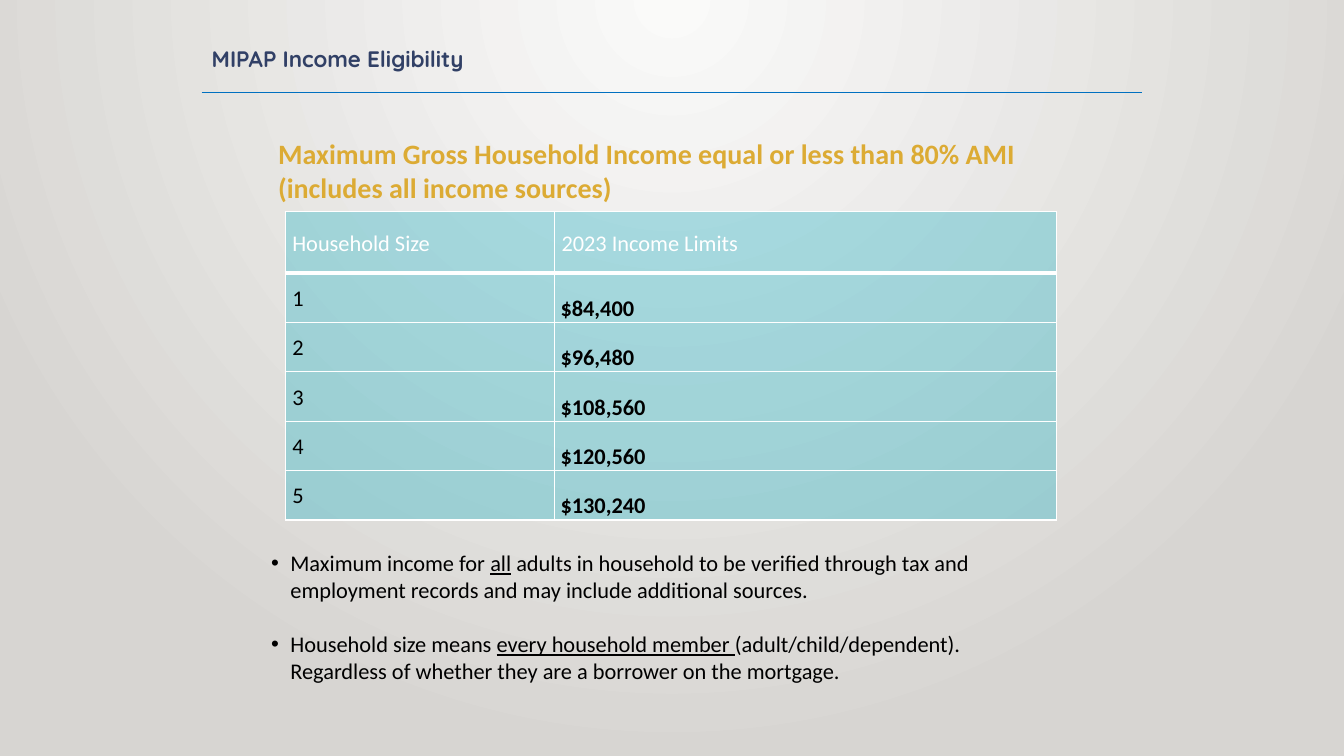
import lxml.etree
import pptx
import pptx.dml.color
import pptx.enum.shapes
import pptx.enum.text
import pptx.oxml.ns
import pptx.util

Inches = pptx.util.Inches
Pt = pptx.util.Pt
qn = pptx.oxml.ns.qn
Anchor = pptx.enum.text.MSO_ANCHOR


def rgb(value):
    return pptx.dml.color.RGBColor.from_string(value)


def write(paragraph, text, color, size=16, bold=False, underline=False, face="Calibri"):
    run = paragraph.add_run()
    run.text = text
    formats = {"name": face, "size": Pt(size), "bold": bold, "underline": underline}
    for key, value in formats.items():
        setattr(run.font, key, value)
    run.font.color.rgb = rgb(color)


presentation = pptx.Presentation()
presentation.slide_width = Inches(13.33)
presentation.slide_height = Inches(7.5)
slide = presentation.slides.add_slide(presentation.slide_layouts[1])

backdrop = slide.background.fill
backdrop.gradient()
for stop, color in zip(backdrop.gradient_stops, ["FAFAF9", "D7D5D2"]):
    stop.color.rgb = rgb(color)
gradient = slide.background._cSld.find(".//" + qn("a:gradFill"))
gradient.remove(gradient.find(qn("a:lin")))
glow = lxml.etree.SubElement(gradient, qn("a:path"), path="circle")
lxml.etree.SubElement(glow, qn("a:fillToRect"), l="43000", t="0", r="43000", b="100000")

heading = slide.shapes.title
requirements = slide.placeholders[1]
income_rule = slide.shapes.add_textbox(0, 0, 0, 0)
text_areas = [
    (heading, 2, 0.4, 9.42, 0.37),
    (income_rule, 2.66, 1.31, 8, 0.8),
    (requirements, 2.59, 5.4, 7.9, 1.45),
]
for area, left, top, width, height in text_areas:
    layout = {
        "left": Inches(left),
        "top": Inches(top),
        "width": Inches(width),
        "height": Inches(height),
    }
    for key, value in layout.items():
        setattr(area, key, value)
    frame_formats = {
        "word_wrap": True,
        "auto_size": pptx.enum.text.MSO_AUTO_SIZE.NONE,
        "vertical_anchor": Anchor.TOP,
    }
    for key, value in frame_formats.items():
        setattr(area.text_frame, key, value)
    area.text_frame.paragraphs[0].alignment = pptx.enum.text.PP_ALIGN.LEFT

write(heading.text_frame.paragraphs[0], "MIPAP Income Eligibility", "314066",
      bold=True, face="Quicksand")
write(income_rule.text_frame.paragraphs[0],
      "Maximum Gross Household Income equal or less than 80% AMI (includes all income sources)",
      "DCAB34", size=20, bold=True)

divider = slide.shapes.add_connector(
    pptx.enum.shapes.MSO_CONNECTOR.STRAIGHT,
    Inches(2), Inches(0.92), Inches(11.33), Inches(0.92))
divider.line.color.rgb = rgb("0070C0")
divider.line.width = Pt(1)
lxml.etree.SubElement(divider._element.spPr, qn("a:effectLst"))

income_limits = [
    ("Household Size", "2023 Income Limits"),
    ("1", "$84,400"),
    ("2", "$96,480"),
    ("3", "$108,560"),
    ("4", "$120,560"),
    ("5", "$130,240"),
]
limits = slide.shapes.add_table(
    len(income_limits), 2, Inches(2.83), Inches(2.1), Inches(7.65), Inches(3.06)).table
for column, width in zip(limits.columns, [2.67, 4.98]):
    column.width = Inches(width)

for row_index, values in enumerate(income_limits):
    is_header = row_index == 0
    limits.rows[row_index].height = Inches(0.61 if is_header else 0.49)
    for column_index, value in enumerate(values):
        is_amount = column_index == 1 and not is_header
        cell = limits.cell(row_index, column_index)
        inset = Inches(0.06 if is_amount else 0.07)
        cell_formats = {
            "margin_left": inset,
            "margin_right": inset,
            "margin_top": Inches(0.01 if is_amount else 0),
            "margin_bottom": 0,
            "vertical_anchor": Anchor.BOTTOM if is_amount else Anchor.MIDDLE,
        }
        for key, setting in cell_formats.items():
            setattr(cell, key, setting)
        entry = cell.text_frame.paragraphs[0]
        entry.line_spacing = 1 if is_amount else 1.07
        write(entry, value, "FFFFFF" if is_header else "000000", bold=is_amount)

        borders = {"lnL": 1, "lnR": 1, "lnB": 3 if is_header else 1}
        if is_header:
            borders["lnT"] = 1
        properties = cell._tc.get_or_add_tcPr()
        for side in ["lnL", "lnR", "lnT", "lnB"]:
            if side in borders:
                border = lxml.etree.SubElement(
                    properties, qn("a:" + side), w=str(Pt(borders[side])))
                paint = lxml.etree.SubElement(border, qn("a:solidFill"))
                lxml.etree.SubElement(paint, qn("a:srgbClr"), val="FFFFFF")
        cell.fill.solid()
        cell.fill.fore_color.rgb = rgb("2FB6C6")
        tint = properties.find(qn("a:solidFill"))
        properties.append(tint)
        lxml.etree.SubElement(tint[0], qn("a:alpha"), val="38000")

requirement_parts = [
    ("Maximum income for ", "all",
     " adults in household to be verified through tax and employment records"
     " and may include additional sources."),
    ("Household size means ", "every household member ",
     "(adult/child/dependent). Regardless of whether they are a borrower on the mortgage."),
]
for index, parts in enumerate(requirement_parts):
    frame = requirements.text_frame
    requirement = frame.add_paragraph() if index else frame.paragraphs[0]
    indents = requirement._p.get_or_add_pPr()
    indents.set("marL", str(Inches(0.19)))
    indents.set("indent", str(Inches(-0.19)))
    requirement.space_before = Pt(19.5 if index else 0)
    lxml.etree.SubElement(indents, qn("a:buFont"), typeface="Arial")
    lxml.etree.SubElement(indents, qn("a:buChar"), char="•")
    for part_index, part in enumerate(parts):
        write(requirement, part, "000000", underline=part_index == 1)

presentation.save("out.pptx")
